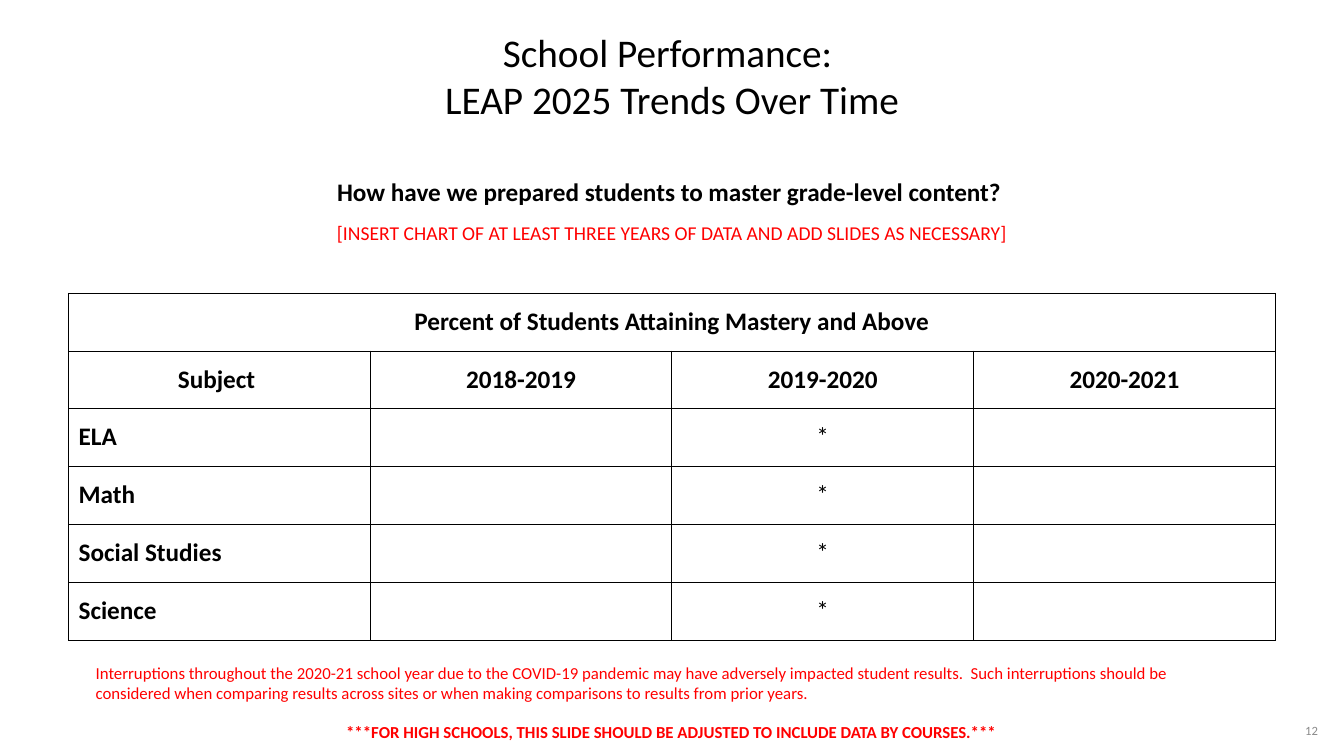
"""Build the school performance trends slide with its mastery table."""
from lxml.etree import SubElement
from pptx import Presentation
from pptx.dml.color import RGBColor
from pptx.enum.text import MSO_ANCHOR as Anchor, MSO_AUTO_SIZE as AutoSize, PP_ALIGN as Align
from pptx.oxml.ns import qn
from pptx.util import Inches, Pt

COLORS = {"text": "000000", "note": "FF0000", "page": "8A8A8A", "fill": "FFFFFF", "border": "000000"}
FONT = "Calibri"

TITLE = [
    ("School Performance: ", 28, "text", False, Align.CENTER, 0),
    ("LEAP 2025 Trends Over Time", 28, "text", False, Align.CENTER, 0),
]
QUESTION = [
    ("How have we prepared students to master grade-level content? ", 18, "text", True, Align.CENTER, 0),
    ("[INSERT CHART OF AT LEAST THREE YEARS OF DATA AND ADD SLIDES AS NECESSARY]",
     14, "note", False, Align.CENTER, 10),
]
NOTES = [
    ("Interruptions throughout the 2020-21 school year due to the COVID-19 pandemic may have adversely "
     "impacted student results.  Such interruptions should be considered when comparing results across "
     "sites or when making comparisons to results from prior years.", 12, "note", False, Align.LEFT, 0),
    ("***FOR HIGH SCHOOLS, THIS SLIDE SHOULD BE ADJUSTED TO INCLUDE DATA BY COURSES.***",
     12, "note", True, Align.CENTER, 14),
]
PAGE_NUMBER = [("12", 9, "page", False, Align.RIGHT, 0)]
TEXT_BOXES = [
    (QUESTION, (0.27, 1.65, 12.79, 1), 0.1, Anchor.TOP),
    (NOTES, (0.85, 6.47, 11.62, 0.71), 0.1, Anchor.TOP),
    (PAGE_NUMBER, (9.92, 7, 3.25, 0.5), 0.05, Anchor.MIDDLE),
]

TABLE_HEADING = "Percent of Students Attaining Mastery and Above"
HEADERS = ["Subject ", "2018-2019", "2019-2020", "2020-2021"]
SUBJECTS = ["ELA", "Math", "Social Studies", "Science"]
ROWS = [[TABLE_HEADING, "", "", ""], HEADERS] + [[subject, "", "*", ""] for subject in SUBJECTS]
HEADER_ROWS = 2
TABLE_LEFT, TABLE_TOP, TABLE_WIDTH, TABLE_HEIGHT = 0.68, 2.91, 11.97, 3.44


def color(name):
    return RGBColor.from_string(COLORS[name])


def write(frame, lines):
    for index, (text, size, color_name, bold, align, space_before) in enumerate(lines):
        paragraph = frame.paragraphs[0] if index == 0 else frame.add_paragraph()
        paragraph.alignment = align
        paragraph.space_before = Pt(space_before)
        run = paragraph.add_run()
        run.text = text
        run.font.name = FONT
        run.font.size = Pt(size)
        run.font.bold = bold
        run.font.color.rgb = color(color_name)


def fill_frame(frame, lines, margin, anchor):
    frame.word_wrap = True
    frame.auto_size = AutoSize.NONE
    frame.vertical_anchor = anchor
    frame.margin_left = frame.margin_right = Inches(0.1)
    frame.margin_top = frame.margin_bottom = Inches(margin)
    write(frame, lines)


def style_cell(cell):
    cell.margin_left = cell.margin_right = Inches(0.1)
    cell.margin_top = cell.margin_bottom = Inches(0.13)
    properties = cell._tc.get_or_add_tcPr()
    for side in ("a:lnL", "a:lnR", "a:lnT", "a:lnB"):
        line = SubElement(properties, qn(side), w=str(Pt(0.75)))
        SubElement(SubElement(line, qn("a:solidFill")), qn("a:srgbClr"), val=COLORS["border"])
    cell.fill.solid()
    cell.fill.fore_color.rgb = color("fill")


def add_mastery_table(slide):
    box = map(Inches, (TABLE_LEFT, TABLE_TOP, TABLE_WIDTH, TABLE_HEIGHT))
    table = slide.shapes.add_table(len(ROWS), len(HEADERS), *box).table
    table.first_row = table.horz_banding = False
    for row_index, values in enumerate(ROWS):
        for column_index, text in enumerate(values):
            cell = table.cell(row_index, column_index)
            style_cell(cell)
            if text:
                is_subject = row_index >= HEADER_ROWS and column_index == 0
                align = Align.LEFT if is_subject else Align.CENTER
                write(cell.text_frame, [(text, 18, "text", text != "*", align, 0)])
    table.cell(0, 0).merge(table.cell(0, len(HEADERS) - 1))


def main():
    presentation = Presentation()
    presentation.slide_width, presentation.slide_height = Inches(13.33), Inches(7.5)
    slide = presentation.slides.add_slide(presentation.slide_layouts[5])
    title = slide.shapes.title
    title.left, title.top, title.width, title.height = map(Inches, (0, -0.02, 13.33, 1.53))
    fill_frame(title.text_frame, TITLE, 0.1, Anchor.MIDDLE)
    add_mastery_table(slide)
    for lines, box, margin, anchor in TEXT_BOXES:
        text_box = slide.shapes.add_textbox(*map(Inches, box))
        fill_frame(text_box.text_frame, lines, margin, anchor)
    presentation.save("out.pptx")


if __name__ == "__main__":
    main()
